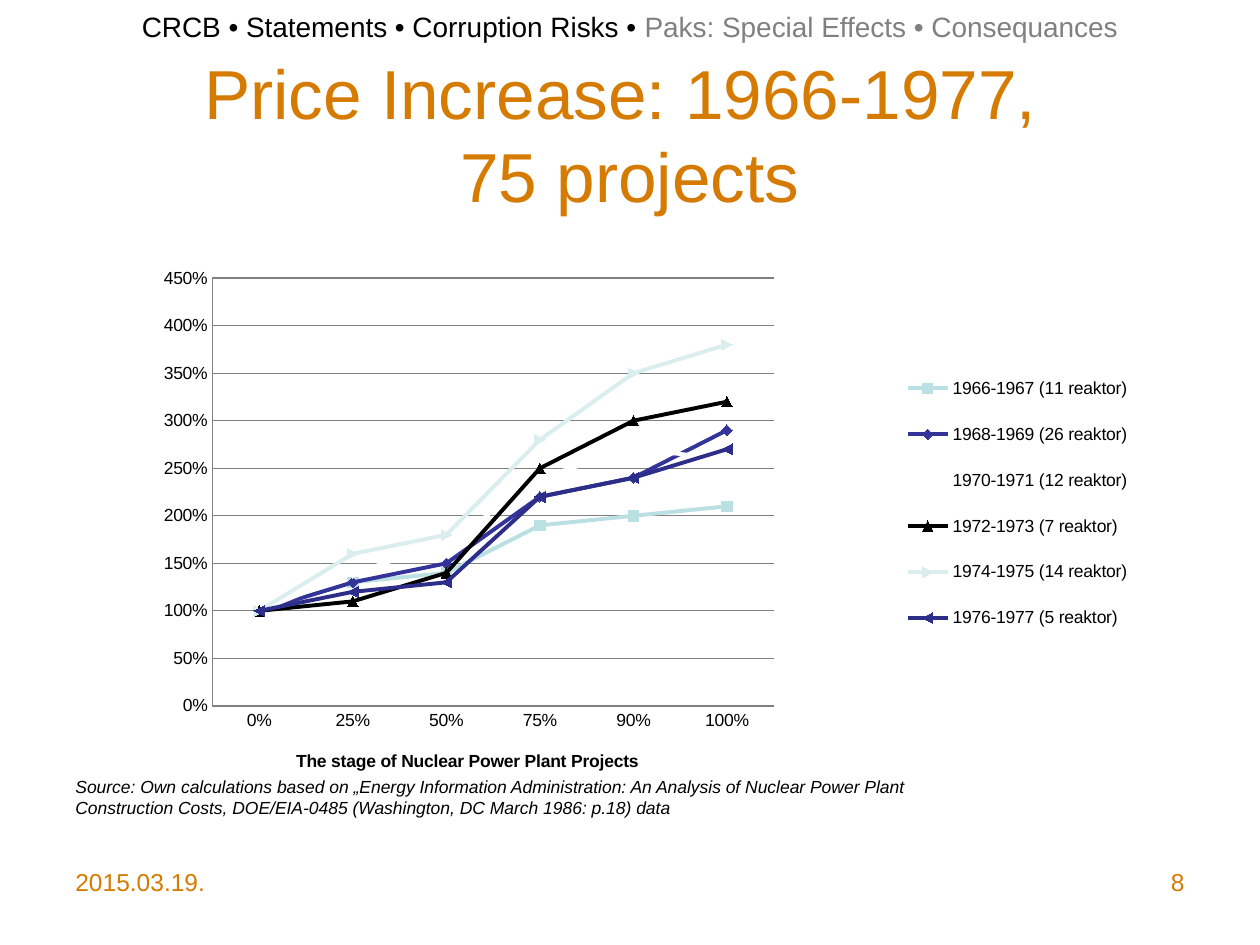
from dataclasses import dataclass

from lxml.etree import SubElement
from pptx import Presentation
from pptx.chart.data import CategoryChartData
from pptx.dml.color import RGBColor
from pptx.enum.chart import XL_CHART_TYPE, XL_LEGEND_POSITION, XL_TICK_MARK
from pptx.enum.text import MSO_ANCHOR, PP_ALIGN
from pptx.oxml.ns import qn
from pptx.util import Inches, Pt

FONT = "Arial"
ORANGE = RGBColor(0xD6, 0x7B, 0x01)
BLACK = RGBColor(0, 0, 0)
GRAY = RGBColor(0x80, 0x80, 0x80)
AQUA = RGBColor(0xBB, 0xE0, 0xE3)
INDIGO = RGBColor(0x33, 0x33, 0x99)
WHITE = RGBColor(0xFF, 0xFF, 0xFF)
PALE_AQUA = RGBColor(0xDA, 0xED, 0xEF)
NAVY = RGBColor(0x2D, 0x2D, 0x8A)


@dataclass
class Cohort:
    name: str
    price_levels: tuple[float, ...]
    color: RGBColor


STAGES = (0, 0.25, 0.5, 0.75, 0.9, 1)
COHORTS = (
    Cohort("1966-1967 (11 reaktor)", (1, 1.3, 1.4, 1.9, 2, 2.1), AQUA),
    Cohort("1968-1969 (26 reaktor)", (1, 1.3, 1.5, 2.2, 2.4, 2.9), INDIGO),
    Cohort("1970-1971 (12 reaktor)", (1, 1.4, 1.7, 2.4, 2.7, 2.6), WHITE),
    Cohort("1972-1973 (7 reaktor)", (1, 1.1, 1.4, 2.5, 3, 3.2), BLACK),
    Cohort("1974-1975 (14 reaktor)", (1, 1.6, 1.8, 2.8, 3.5, 3.8), PALE_AQUA),
    Cohort("1976-1977 (5 reaktor)", (1, 1.2, 1.3, 2.2, 2.4, 2.7), NAVY),
)


def add_text(slide, text, left, top, width, height, *, size, color=BLACK,
             align=PP_ALIGN.LEFT, anchor=MSO_ANCHOR.TOP, italic=False,
             ending="", ending_color=GRAY):
    box = slide.shapes.add_textbox(Inches(left), Inches(top), Inches(width), Inches(height))
    frame = box.text_frame
    frame.word_wrap = True
    frame.vertical_anchor = anchor
    paragraph = frame.paragraphs[0]
    paragraph.alignment = align
    paragraph.text = text
    if ending:
        paragraph.add_run().text = ending
    for run in paragraph.runs:
        run.font.name = FONT
        run.font.size = Pt(size)
        run.font.italic = italic
        run.font.color.rgb = color
    if ending:
        paragraph.runs[-1].font.color.rgb = ending_color


def set_layout(layout, *, inner: bool = False, **fractions: float) -> None:
    for child in list(layout):
        layout.remove(child)
    manual = SubElement(layout, qn("c:manualLayout"))
    settings = {"layoutTarget": "inner"} if inner else {}
    settings |= {"xMode": "edge", "yMode": "edge"} | fractions
    for tag, value in settings.items():
        SubElement(manual, qn(f"c:{tag}")).set("val", str(value))


def layout_after(element, predecessor: str):
    layout = element.find(qn("c:layout"))
    if layout is None:
        layout = SubElement(element, qn("c:layout"))
        element.find(qn(predecessor)).addnext(layout)
    return layout


def add_price_chart(slide) -> None:
    data = CategoryChartData(number_format="0%")
    data.categories = STAGES
    data.categories.number_format = "0%"
    for cohort in COHORTS:
        data.add_series(cohort.name, cohort.price_levels)
    chart = slide.shapes.add_chart(
        XL_CHART_TYPE.LINE_MARKERS, Inches(0.59), Inches(1.65),
        Inches(9.13), Inches(5.21), data).chart
    chart.has_title = False
    chart.font.name = FONT
    chart.font.size = Pt(10)
    chart.font.color.rgb = BLACK

    plot = chart.plots[0]
    plot.vary_by_categories = False
    for series, cohort in zip(plot.series, COHORTS):
        series.smooth = False
        series.format.line.color.rgb = cohort.color
        series.format.line.width = Pt(2.25)
        series.marker.size = 6
        series.marker.format.fill.solid()
        series.marker.format.fill.fore_color.rgb = cohort.color
        series.marker.format.line.color.rgb = cohort.color

    stage_axis, price_axis = chart.category_axis, chart.value_axis
    for axis in (stage_axis, price_axis):
        axis.major_tick_mark = XL_TICK_MARK.NONE
        axis.minor_tick_mark = XL_TICK_MARK.NONE
        axis.tick_labels.number_format = "0%"
        axis.tick_labels.number_format_is_linked = False
        axis.format.line.color.rgb = GRAY
    price_axis.minimum_scale = 0
    price_axis.maximum_scale = 4.5
    price_axis.major_unit = 0.5
    price_axis.has_major_gridlines = True
    price_axis.major_gridlines.format.line.color.rgb = GRAY

    stage_title = stage_axis.axis_title
    stage_title.text_frame.text = "The stage of Nuclear Power Plant Projects"
    title_font = stage_title.text_frame.paragraphs[0].runs[0].font
    title_font.name = FONT
    title_font.size = Pt(10)
    title_font.bold = True
    title_font.color.rgb = BLACK

    chart.has_legend = True
    legend = chart.legend
    legend.position = XL_LEGEND_POSITION.RIGHT
    legend.include_in_layout = False

    plot_area = chart.element.find(".//" + qn("c:plotArea"))
    plot_layout = plot_area.find(qn("c:layout"))
    if plot_layout is None:
        plot_layout = SubElement(plot_area, qn("c:layout"))
        plot_area.insert(0, plot_layout)
    set_layout(plot_layout, inner=True, x=0.12, y=0.107, w=0.488, h=0.652)
    title_element = stage_axis.axis_title.format.line and plot_area.find(".//" + qn("c:title"))
    set_layout(layout_after(title_element, "c:tx"), x=0.19, y=0.82)
    legend_element = chart.element.find(".//" + qn("c:legend"))
    set_layout(layout_after(legend_element, "c:legendPos"), x=0.71, y=0.22, w=0.22, h=0.46)


def main() -> None:
    presentation = Presentation()
    presentation.slide_width = Inches(10)
    presentation.slide_height = Inches(7.5)
    slide = presentation.slides.add_slide(presentation.slide_layouts[6])

    add_text(slide, "Price Increase: 1966-1977, \v75 projects", 0.5, 0.44, 9, 1.23,
             size=39.6, color=ORANGE, align=PP_ALIGN.CENTER, anchor=MSO_ANCHOR.MIDDLE)
    add_text(slide, "2015.03.19.", 0.5, 6.83, 2.33, 0.52, size=14, color=ORANGE)
    add_text(slide, "8", 7.17, 6.83, 2.33, 0.52, size=14, color=ORANGE,
             align=PP_ALIGN.RIGHT)
    add_price_chart(slide)
    add_text(slide, "Source: Own calculations based on „Energy Information Administration: "
             "An Analysis of Nuclear Power Plant Construction Costs, DOE/EIA-0485 "
             "(Washington, DC March 1986: p.18) data", 0.5, 6.11, 7.49, 0.44,
             size=10, italic=True)
    add_text(slide, "CRCB • Statements • Corruption Risks • ", 0, 0.03, 10, 0.37,
             size=16, align=PP_ALIGN.CENTER, ending="Paks: Special Effects • Consequances")
    presentation.save("out.pptx")


if __name__ == "__main__":
    main()
